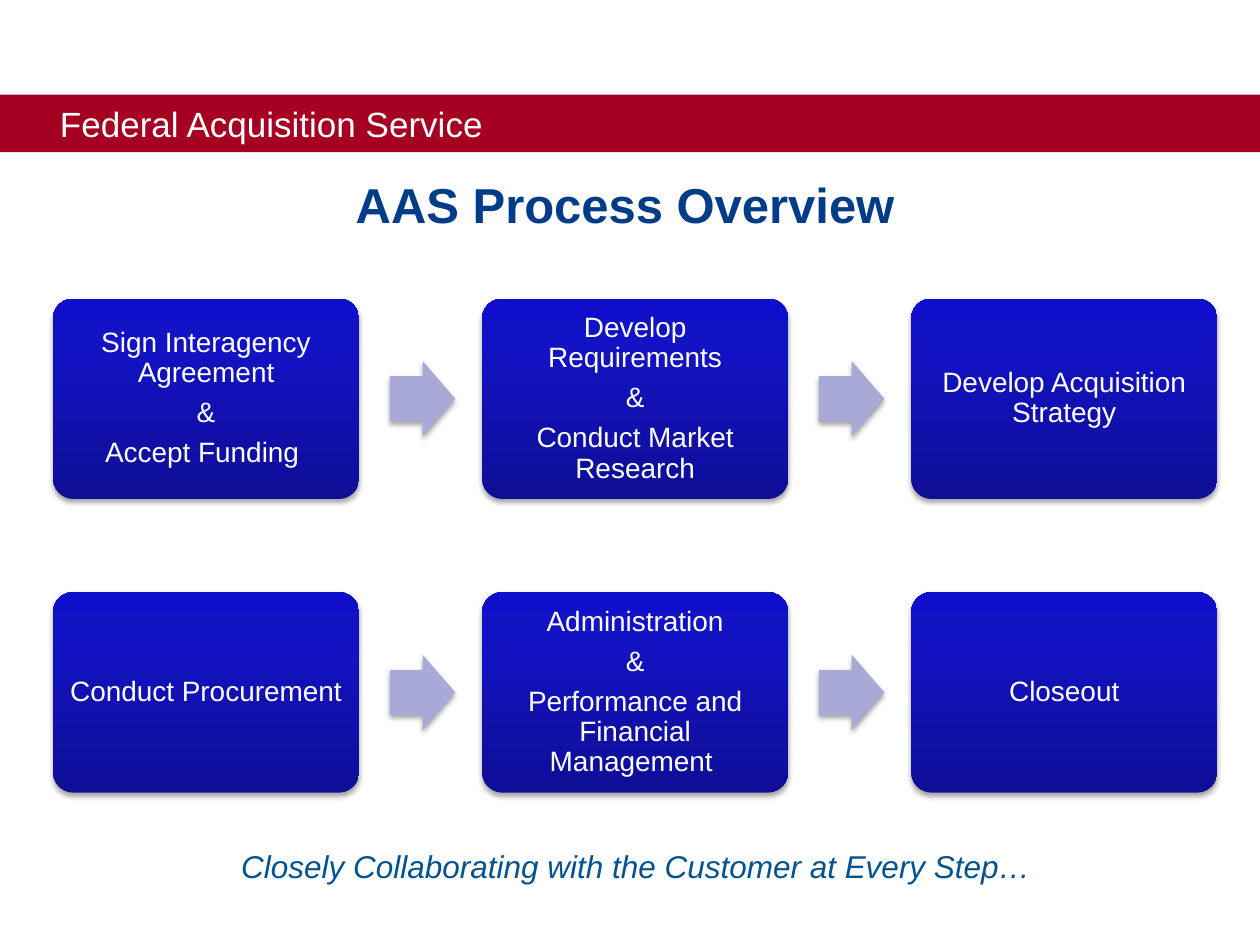
from copy import deepcopy

from lxml import etree
from pptx import Presentation
from pptx.dml.color import RGBColor
from pptx.enum.shapes import MSO_SHAPE as Preset
from pptx.enum.text import MSO_ANCHOR as Anchor, PP_ALIGN as Align
from pptx.oxml.ns import qn
from pptx.util import Cm, Pt

WHITE = RGBColor(0xFF, 0xFF, 0xFF)
BAND_RED = RGBColor(0xA5, 0x00, 0x21)
TITLE_BLUE = RGBColor(0x01, 0x3C, 0x88)
CLOSING_BLUE = RGBColor(0x00, 0x53, 0x90)
ARROW_LILAC = RGBColor(0xA9, 0xA9, 0xD7)
STEP_STOPS = [
    (0, RGBColor(0x0E, 0x0E, 0x97)),
    (0.8, RGBColor(0x13, 0x13, 0xC6)),
    (1, RGBColor(0x0F, 0x0F, 0xCB)),
]
FONT = "Arial"

STEP_ROWS = [
    [
        ["Sign Interagency Agreement", "&", "Accept Funding "],
        ["Develop Requirements", "&", "Conduct Market Research"],
        ["Develop Acquisition Strategy"],
    ],
    [
        ["Conduct Procurement"],
        ["Administration", "&", "Performance and Financial Management "],
        ["Closeout"],
    ],
]


def add_preset(slide, preset, left, top, width, height):
    shape = slide.shapes.add_shape(preset, Cm(left), Cm(top), Cm(width), Cm(height))
    shape.shadow.inherit = False
    shape.line.fill.background()
    return shape


def add_soft_shadow(shape):
    """Short shadow straight below the shape."""
    effects = shape._element.spPr.find(qn("a:effectLst"))
    shadow = etree.SubElement(
        effects, qn("a:outerShdw"), blurRad=str(Pt(3.1)), dist=str(Pt(1.8)),
        dir="5400000", rotWithShape="0")
    color = etree.SubElement(shadow, qn("a:srgbClr"), val="000000")
    etree.SubElement(color, qn("a:alpha"), val="34000")


def fill_gradient(shape, stops):
    """Vertical gradient whose first stop is at the bottom."""
    fill = shape.fill
    fill.gradient()
    fill.gradient_angle = 90
    stop_list = shape._element.spPr.find(qn("a:gradFill")).find(qn("a:gsLst"))
    while len(stop_list) < len(stops):
        stop_list.append(deepcopy(stop_list[-1]))
    for stop, (position, color) in zip(fill.gradient_stops, stops):
        stop.position = position
        stop.color.rgb = color


def write_text(shape, lines, size, color, align=Align.CENTER, bold=False, italic=False):
    frame = shape.text_frame
    frame.word_wrap = True
    frame.vertical_anchor = Anchor.MIDDLE
    for index, line in enumerate(lines):
        paragraph = frame.add_paragraph() if index else frame.paragraphs[0]
        paragraph.alignment = align
        run = paragraph.add_run()
        run.text = line
        font = run.font
        font.name, font.size = FONT, Pt(size)
        font.bold, font.italic = bold, italic
        font.color.rgb = color
    return frame


def add_text(slide, left, top, width, height, text, size, color, **style):
    box = slide.shapes.add_textbox(Cm(left), Cm(top), Cm(width), Cm(height))
    write_text(box, [text], size, color, **style)


def add_band(slide, left, top, width, height):
    band = add_preset(slide, Preset.RECTANGLE, left, top, width, height)
    band.fill.solid()
    band.fill.fore_color.rgb = BAND_RED
    frame = write_text(band, ["Federal Acquisition Service"], 20, WHITE, align=Align.LEFT)
    frame.margin_left = Cm(1.21)


def add_step(slide, left, top, width, height, lines):
    step = add_preset(slide, Preset.ROUNDED_RECTANGLE, left, top, width, height)
    step.adjustments[0] = 0.1
    fill_gradient(step, STEP_STOPS)
    add_soft_shadow(step)
    frame = write_text(step, lines, 16, WHITE)
    frame.margin_left = frame.margin_right = Cm(0.17)
    frame.margin_top = frame.margin_bottom = Cm(0.17)
    for index, paragraph in enumerate(frame.paragraphs):
        paragraph.line_spacing = 0.9
        if index:
            paragraph.space_before = Pt(5.6)


def add_arrow(slide, left, top, width, height):
    arrow = add_preset(slide, Preset.RIGHT_ARROW, left, top, width, height)
    arrow.adjustments[0], arrow.adjustments[1] = 0.6, 0.5
    arrow.fill.solid()
    arrow.fill.fore_color.rgb = ARROW_LILAC
    add_soft_shadow(arrow)


def add_process(slide, left, top, width, height, rows):
    """Rows of steps spread over the box, with an arrow in each gap."""
    step_width, step_height = 6.17, 4.04
    arrow_width, arrow_height, arrow_gap = 1.32, 1.52, 0.62
    row_pitch = (height - step_height) / (len(rows) - 1)
    for row, steps in enumerate(rows):
        y = top + row * row_pitch
        column_pitch = (width - step_width) / (len(steps) - 1)
        for column, lines in enumerate(steps):
            x = left + column * column_pitch
            add_step(slide, x, y, step_width, step_height, lines)
            if column < len(steps) - 1:
                add_arrow(slide, x + step_width + arrow_gap,
                          y + (step_height - arrow_height) / 2,
                          arrow_width, arrow_height)


def main():
    presentation = Presentation()
    presentation.slide_width, presentation.slide_height = Cm(25.4), Cm(19.05)
    slide = presentation.slides.add_slide(presentation.slide_layouts[6])

    # Heading
    add_band(slide, 0, 1.91, 25.4, 1.16)
    add_text(slide, 2.54, 3.38, 20.12, 1.45, "AAS Process Overview", 28, TITLE_BLUE, bold=True)

    # Process steps
    add_process(slide, 1.07, 6.02, 23.47, 9.96, STEP_ROWS)

    # Closing line
    add_text(slide, 1.07, 16.94, 23.5, 1.02,
             "Closely Collaborating with the Customer at Every Step…",
             18, CLOSING_BLUE, italic=True)

    presentation.save("out.pptx")


if __name__ == "__main__":
    main()
